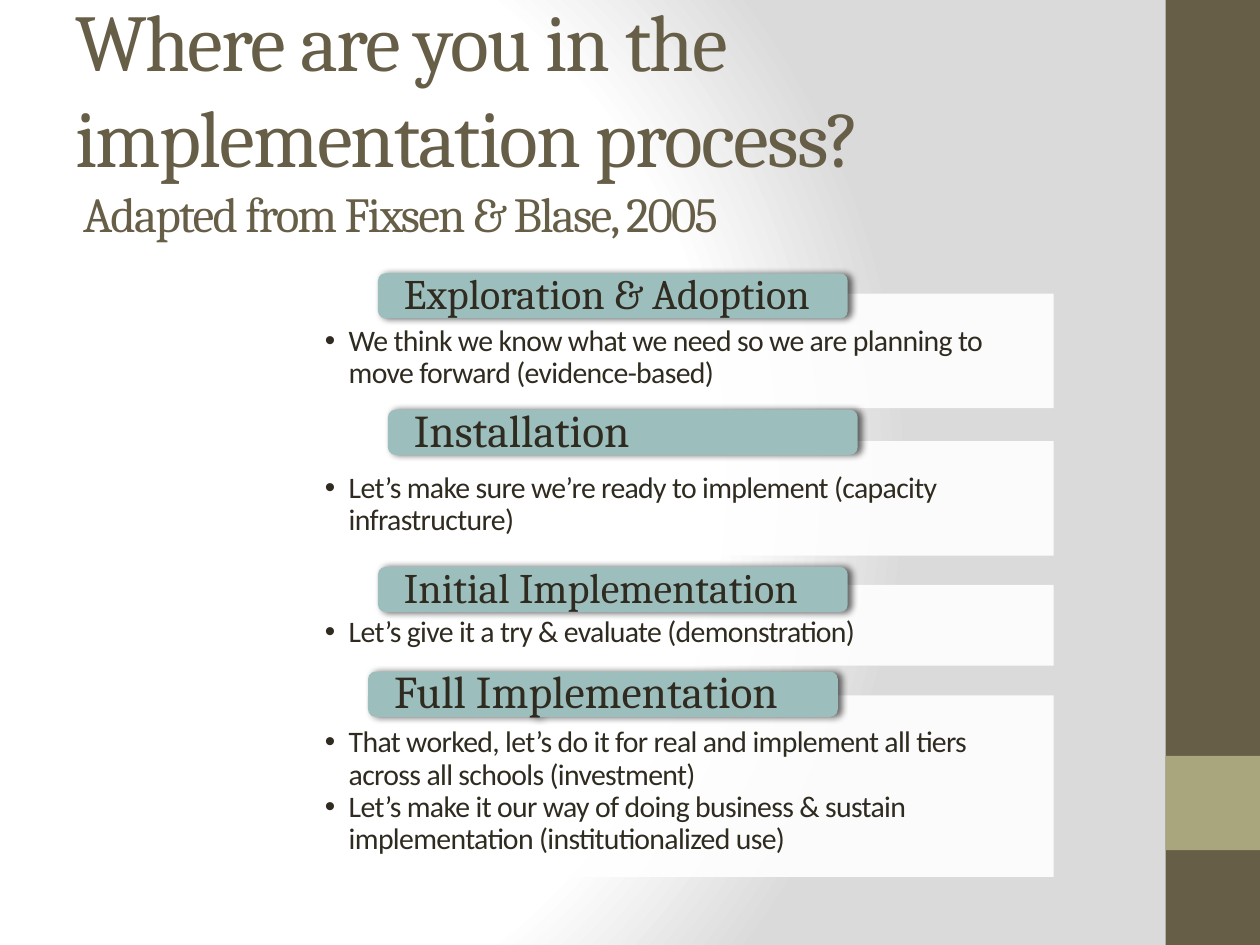
from dataclasses import dataclass

import pptx
import pptx.dml.color
import pptx.enum.shapes
import pptx.enum.text
import pptx.oxml
import pptx.oxml.ns
import pptx.shapes.base
import pptx.slide
import pptx.text.text
from pptx.util import Cm


@dataclass(frozen=True)
class Theme:
    brown: str = "675E47"
    olive: str = "A9A57C"
    teal: str = "9CBEBD"
    ink: str = "2F2B20"
    white: str = "FFFFFF"
    grey: str = "DADADA"
    heading_font: str = "Cambria"
    body_font: str = "Calibri"
    title_size: int = 46
    indent_size: int = 20
    credit_size: int = 28
    body_size: int = 17
    title_tracking: int = -100
    body_tracking: int = -40


@dataclass(frozen=True)
class Stage:
    name: str
    name_size: int
    label_left: float
    label_top: float
    panel_top: float
    panel_height: float
    points: tuple[str, ...]


THEME = Theme()
NAMESPACES = pptx.oxml.ns.nsdecls("a", "p")
STAGES = (
    Stage("Exploration & Adoption", 24, 7.62, 5.51, 5.92, 2.31,
          ("We think we know what we need so we are planning to move forward (evidence-based)",)),
    Stage("Installation", 26, 7.82, 8.26, 8.89, 2.31,
          ("Let’s make sure we’re ready to implement (capacity infrastructure)",)),
    Stage("Initial Implementation", 24, 7.62, 11.43, 11.79, 1.63,
          ("Let’s give it a try & evaluate (demonstration)",)),
    Stage("Full Implementation", 26, 7.42, 13.54, 14.02, 3.66,
          ("That worked, let’s do it for real and implement all tiers across all schools (investment)",
           "Let’s make it our way of doing business & sustain implementation (institutionalized use)")),
)


def rgb(color: str) -> pptx.dml.color.RGBColor:
    return pptx.dml.color.RGBColor.from_string(color)


def place(shape: pptx.shapes.base.BaseShape, left: float, top: float,
          width: float, height: float) -> None:
    shape.left, shape.top = Cm(left), Cm(top)
    shape.width, shape.height = Cm(width), Cm(height)


def set_font(paragraph: pptx.text.text._Paragraph, name: str, color: str,
             size: int | None = None, tracking: int = 0) -> None:
    font = paragraph.font
    font.name = name
    font.bold = False
    font.color.rgb = rgb(color)
    if size:
        font.size = pptx.util.Pt(size)
    font._rPr.set("spc", str(tracking))


def set_frame(frame: pptx.text.text.TextFrame, anchor: pptx.enum.text.MSO_ANCHOR,
              side: float, top: float, bottom: float) -> None:
    frame.word_wrap = True
    frame.auto_size = pptx.enum.text.MSO_AUTO_SIZE.NONE
    frame.vertical_anchor = anchor
    frame.margin_left = frame.margin_right = Cm(side)
    frame.margin_top, frame.margin_bottom = Cm(top), Cm(bottom)


def set_spacing(paragraph: pptx.text.text._Paragraph, line_spacing: float) -> None:
    paragraph.alignment = pptx.enum.text.PP_ALIGN.LEFT
    paragraph.line_spacing = line_spacing
    paragraph.space_before = paragraph.space_after = pptx.util.Pt(0)


def add_block(slide: pptx.slide.Slide, kind: pptx.enum.shapes.MSO_SHAPE, color: str,
              left: float, top: float, width: float,
              height: float) -> pptx.shapes.base.BaseShape:
    shape = slide.shapes.add_shape(kind, Cm(left), Cm(top), Cm(width), Cm(height))
    shape.fill.solid()
    shape.fill.fore_color.rgb = rgb(color)
    shape.line.fill.background()
    shape.shadow.inherit = False
    return shape


def set_background(slide: pptx.slide.Slide) -> None:
    stops = "".join(
        f'<a:gs pos="{position}"><a:srgbClr val="{color}"/></a:gs>'
        for position, color in ((0, THEME.white), (75000, THEME.white), (100000, THEME.grey))
    )
    slide._element.cSld.insert(0, pptx.oxml.parse_xml(
        f'<p:bg {NAMESPACES}><p:bgPr><a:gradFill rotWithShape="1"><a:gsLst>{stops}</a:gsLst>'
        '<a:path path="circle"><a:fillToRect l="20000" t="50000" r="100000" b="50000"/></a:path>'
        '</a:gradFill><a:effectLst/></p:bgPr></p:bg>'
    ))


def fill_title(title: pptx.shapes.base.BaseShape) -> None:
    place(title, 1.27, 0.76, 21.16, 3.18)
    set_frame(title.text_frame, pptx.enum.text.MSO_ANCHOR.MIDDLE, 0.25, 0.13, 0.13)
    paragraph = title.text_frame.paragraphs[0]
    set_spacing(paragraph, 1.0)
    set_font(paragraph, THEME.heading_font, THEME.brown, tracking=THEME.title_tracking)
    question = paragraph.add_run()
    question.text = "Where are you in the implementation process?"
    question.font.size = pptx.util.Pt(THEME.title_size)
    paragraph.add_line_break()
    for text, size in ((" ", THEME.indent_size),
                       ("Adapted from Fixsen & Blase, 2005", THEME.credit_size)):
        run = paragraph.add_run()
        run.text = text
        run.font.size = pptx.util.Pt(size)


def fill_panel(panel: pptx.shapes.base.BaseShape, stage: Stage) -> None:
    place(panel, 5.31, stage.panel_top, 15.93, stage.panel_height)
    panel.fill.solid()
    panel.fill.fore_color.rgb = rgb(THEME.white)
    color = panel._element.spPr.find(".//" + pptx.oxml.ns.qn("a:srgbClr"))
    color.append(pptx.oxml.parse_xml(f'<a:alpha {NAMESPACES} val="90000"/>'))
    frame = panel.text_frame
    set_frame(frame, pptx.enum.text.MSO_ANCHOR.TOP, 1.24, 0.64, 0.33)
    frame.text = "\n".join(stage.points)
    for paragraph in frame.paragraphs:
        paragraph.level = 1
        set_spacing(paragraph, 0.9)
        properties = paragraph._p.get_or_add_pPr()
        properties.set("marL", str(Cm(0.48)))
        properties.set("indent", str(Cm(-0.48)))
        for bullet in ('<a:buFont {} typeface="Arial"/>', '<a:buChar {} char="•"/>'):
            properties.append(pptx.oxml.parse_xml(bullet.format(NAMESPACES)))
        set_font(paragraph, THEME.body_font, THEME.ink, THEME.body_size, THEME.body_tracking)


def add_label(slide: pptx.slide.Slide, stage: Stage) -> None:
    label = add_block(slide, pptx.enum.shapes.MSO_SHAPE.ROUNDED_RECTANGLE, THEME.teal,
                      stage.label_left, stage.label_top, 9.47, 0.91)
    effects = label._element.spPr.find(pptx.oxml.ns.qn("a:effectLst"))
    effects.append(pptx.oxml.parse_xml(
        f'<a:outerShdw {NAMESPACES} blurRad="50800" dist="25400" dir="0" rotWithShape="0">'
        '<a:srgbClr val="000000"><a:alpha val="60000"/></a:srgbClr></a:outerShdw>'
    ))
    set_frame(label.text_frame, pptx.enum.text.MSO_ANCHOR.MIDDLE, 0.48, 0, 0)
    label.text_frame.text = stage.name
    paragraph = label.text_frame.paragraphs[0]
    set_spacing(paragraph, 0.9)
    set_font(paragraph, THEME.heading_font, THEME.ink, stage.name_size)


def main() -> None:
    presentation = pptx.Presentation()
    presentation.slide_width, presentation.slide_height = Cm(25.4), Cm(19.05)
    comparison_layout = presentation.slide_layouts[4]
    slide = presentation.slides.add_slide(comparison_layout)
    set_background(slide)
    rectangle = pptx.enum.shapes.MSO_SHAPE.RECTANGLE
    add_block(slide, rectangle, THEME.brown, 23.5, 0, 1.9, 19.05)
    add_block(slide, rectangle, THEME.olive, 23.5, 15.24, 1.9, 1.9)
    title, *panels = slide.placeholders
    fill_title(title)
    for panel, stage in zip(panels, STAGES):
        fill_panel(panel, stage)
        add_label(slide, stage)
    presentation.save("out.pptx")


if __name__ == "__main__":
    main()
